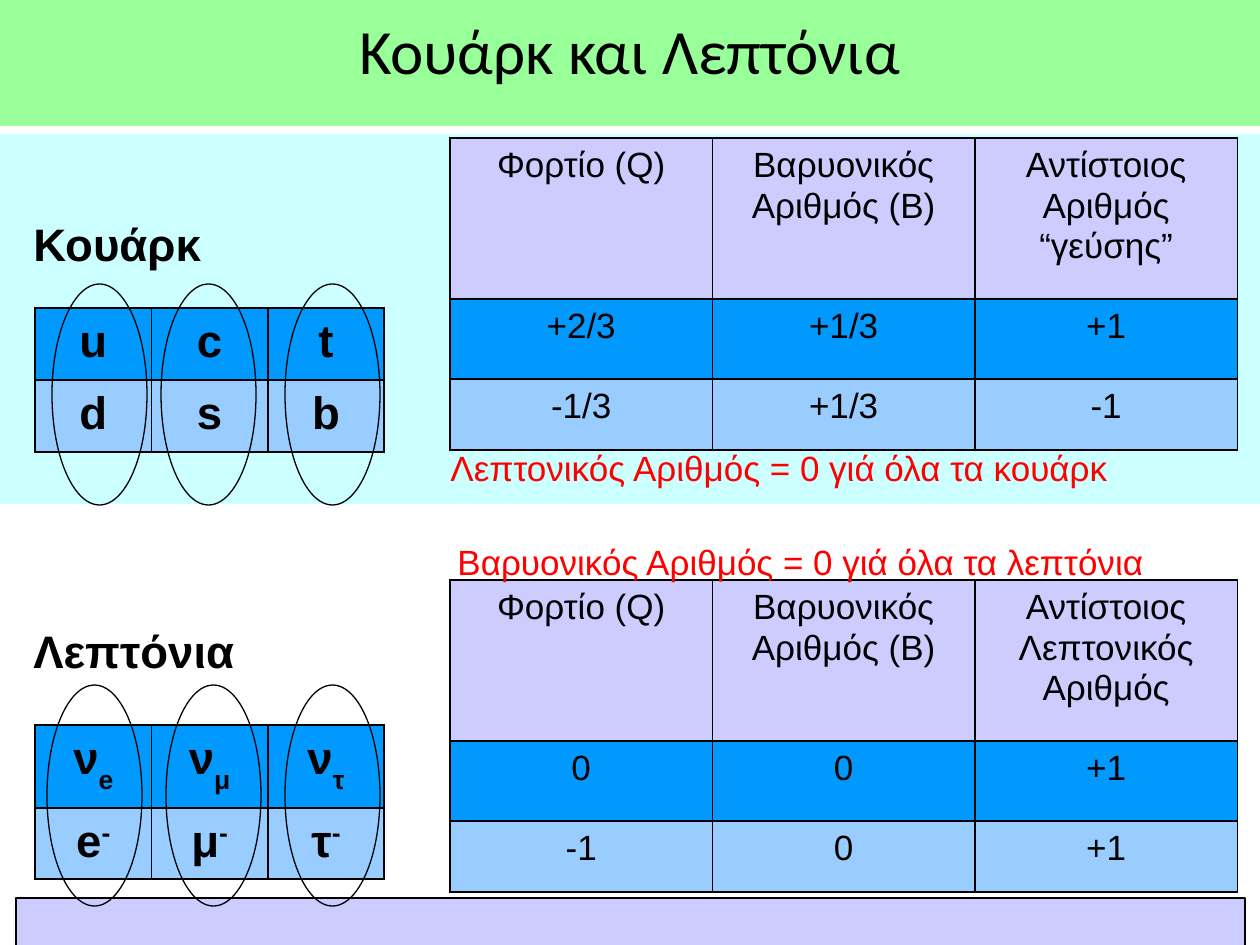
import pptx
import pptx.dml.color
import pptx.enum.shapes
import pptx.enum.text
import pptx.oxml
import pptx.oxml.ns
import pptx.util

SCALE = 914400 / 126
SHAPE = pptx.enum.shapes.MSO_SHAPE
CENTER = pptx.enum.text.PP_ALIGN.CENTER
ANCHOR = pptx.enum.text.MSO_ANCHOR
LILAC, BLUE, SKY = "CCCCFF", "0099FF", "99CCFF"
HEADING = {"size": pptx.util.Pt(26), "name": "Arial", "bold": True}
BODY = {"size": pptx.util.Pt(20), "name": "Arial", "bold": False}
TITLE = {"size": pptx.util.Pt(36), "name": "Calibri", "bold": False}
SUB, SUP = -33000, 33000

QUARKS = {
    "name": "Κουάρκ", "name_y": 76,
    "members": [["u", "c", "t"], ["d", "s", "b"]],
    "members_y": 174, "member_rows": [72, 72],
    "numbers": [
        ["Φορτίο (Q)", "Βαρυονικός Αριθμός (Β)", "Αντίστοιος Αριθμός “γεύσης”"],
        ["+2/3", "+1/3", "+1"],
        ["-1/3", "+1/3", "-1"],
    ],
    "numbers_y": 4,
    "rings_x": [52, 161, 285], "rings_y": 150,
    "note": "Λεπτονικός Αριθμός = 0 γιά όλα τα κουάρκ", "note_at": (438, 306),
}
LEPTONS = {
    "name": "Λεπτόνια", "name_y": 83,
    "members": [
        [[("ν", 0), (flavour, SUB)] for flavour in "eμτ"],
        [[(lepton, 0), ("-", SUP)] for lepton in "eμτ"],
    ],
    "members_y": 191, "member_rows": [83, 71],
    "numbers": [
        ["Φορτίο (Q)", "Βαρυονικός Αριθμός (Β)", "Αντίστοιος Λεπτονικός Αριθμός"],
        ["0", "0", "+1"],
        ["-1", "0", "+1"],
    ],
    "numbers_y": 46,
    "rings_x": [47, 166, 285], "rings_y": 151,
    "note": "Βαρυονικός Αριθμός = 0 γιά όλα τα λεπτόνια", "note_at": (445, 0),
}


def px(n):
    """Turn px into EMU."""
    return pptx.util.Emu(round(n * SCALE))


def color(value):
    """Turn a hex string into a colour."""
    return pptx.dml.color.RGBColor.from_string(value)


def set_all(obj, values):
    """Set each attribute named in a dict."""
    for key, value in values.items():
        setattr(obj, key, value)


def write(tf, runs, fmt, ink="000000", **para):
    """Write the first paragraph from a string or from (text, baseline) runs."""
    p = tf.paragraphs[0]
    set_all(p, para)
    for text, baseline in [(runs, 0)] if isinstance(runs, str) else runs:
        r = p.add_run()
        r.text = text
        set_all(r.font, fmt)
        r.font.color.rgb = color(ink)
        if baseline:
            r._r.get_or_add_rPr().set("baseline", str(baseline))


def add_shape(s, kind, box, fill=None, line=None):
    """Add a preset shape with an optional fill and outline."""
    sp = s.shapes.add_shape(kind, *map(px, box))
    sp.shadow.inherit = False
    if fill:
        sp.fill.solid()
        sp.fill.fore_color.rgb = color(fill)
    else:
        sp.fill.background()
    if line:
        sp.line.color.rgb = color(line)
        sp.line.width = pptx.util.Pt(0.75)
    else:
        sp.line.fill.background()
    return sp


def add_label(s, box, text, fmt, ink="000000"):
    """Add a wrapping text box."""
    tf = s.shapes.add_textbox(*map(px, box)).text_frame
    tf.word_wrap = True
    write(tf, text, fmt, ink)


def add_borders(cell):
    """Draw a thin black line on each side of a cell."""
    tcPr = cell._tc.get_or_add_tcPr()
    for i, side in enumerate(("lnL", "lnR", "lnT", "lnB")):
        tcPr.insert(i, pptx.oxml.parse_xml(
            f'<a:{side} {pptx.oxml.ns.nsdecls("a")} w="12700"><a:solidFill>'
            f'<a:srgbClr val="000000"/></a:solidFill></a:{side}>'))


def add_grid(s, at, col_w, heights, rows, fills, fmt):
    """Add a table with one fill for each row."""
    size = (col_w * len(rows[0]), sum(heights))
    table = s.shapes.add_table(len(rows), len(rows[0]), *map(px, at + size)).table
    set_all(table, {"first_row": False, "horz_banding": False})
    for col in table.columns:
        col.width = px(col_w)
    for i, (height, texts, fill) in enumerate(zip(heights, rows, fills)):
        table.rows[i].height = px(height)
        for j, text in enumerate(texts):
            cell = table.cell(i, j)
            cell.fill.solid()
            cell.fill.fore_color.rgb = color(fill)
            add_borders(cell)
            write(cell.text_frame, text, fmt, alignment=CENTER, line_spacing=1.04)


def add_title(s, box, text):
    """Fill the box with the title band."""
    tf = add_shape(s, SHAPE.RECTANGLE, box, "99FF99").text_frame
    set_all(tf, {"vertical_anchor": ANCHOR.TOP, "margin_top": px(12), "word_wrap": True})
    write(tf, text, TITLE, alignment=CENTER)


def add_family(s, box, family, fill=None):
    """Place a particle family with its members, numbers and note in the box."""
    x, y = box[:2]
    if fill:
        add_shape(s, SHAPE.RECTANGLE, box, fill)
    add_label(s, (x + 21, y + family["name_y"], 296, 67), family["name"], HEADING)
    add_grid(s, (x + 35, y + family["members_y"]), 116.4, family["member_rows"],
             family["members"], [BLUE, SKY], HEADING)
    add_grid(s, (x + 450, y + family["numbers_y"]), 262.5, [161, 80, 71],
             family["numbers"], [LILAC, BLUE, SKY], BODY)
    for ring_x in family["rings_x"]:
        ring = (x + ring_x, y + family["rings_y"], 95, 221)
        add_shape(s, SHAPE.OVAL, ring, line="000000")
    note_x, note_y = family["note_at"]
    add_label(s, (x + note_x, y + note_y, 788, 54), family["note"], BODY, "FF0000")


def main():
    """Build and save the slide."""
    prs = pptx.Presentation()
    set_all(prs, {"slide_width": px(1260), "slide_height": px(945)})
    s = prs.slides.add_slide(prs.slide_layouts[6])
    add_shape(s, SHAPE.RECTANGLE, (16, 898, 1229, 68), LILAC, "000000")
    add_title(s, (0, 0, 1260, 126), "Κουάρκ και Λεπτόνια")
    add_family(s, (0, 134, 1260, 370), QUARKS, "CCFFFF")
    add_family(s, (0, 534, 1260, 372), LEPTONS)
    prs.save("out.pptx")


if __name__ == "__main__":
    main()
